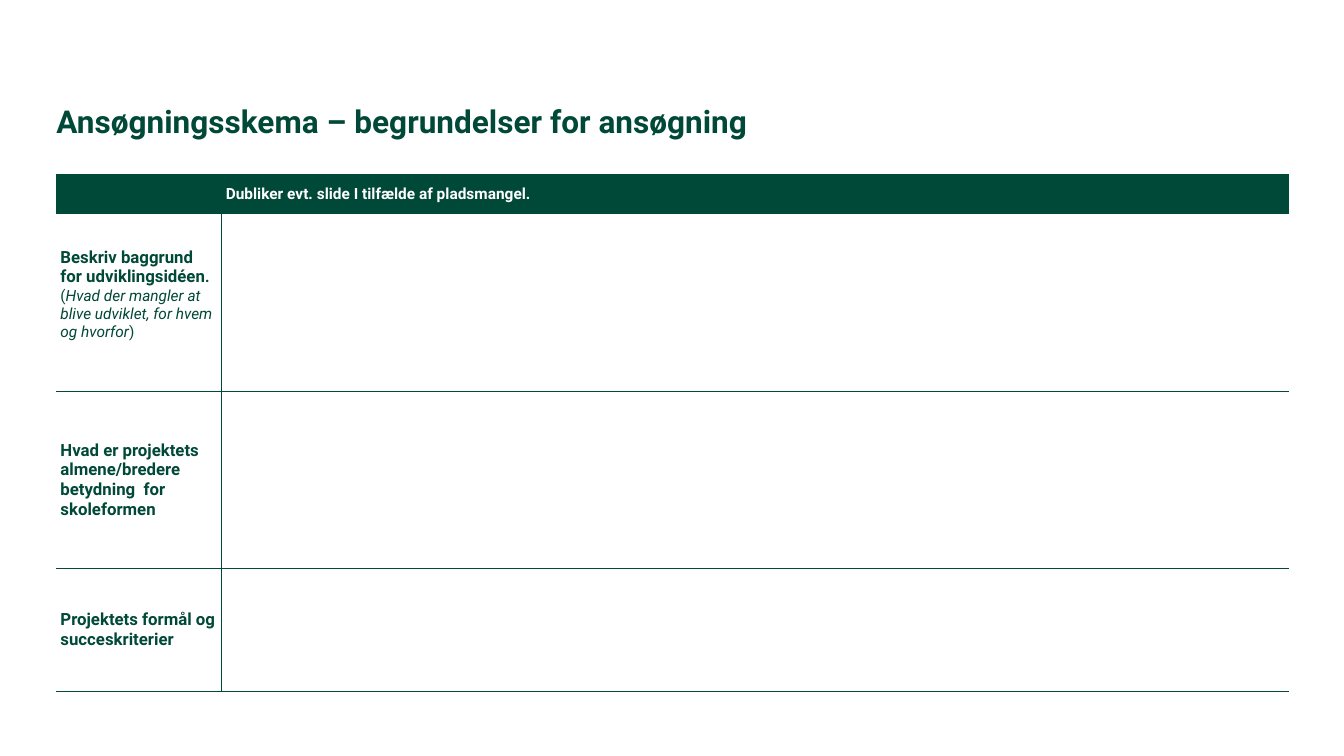
from pptx import Presentation, util as u
from pptx.dml.color import RGBColor
from pptx.enum import text
from pptx.oxml import parse_xml
from pptx.oxml.ns import nsdecls

GREEN = RGBColor(0x00, 0x48, 0x37)
WHITE = RGBColor(0xFF, 0xFF, 0xFF)
PLAIN_TABLE = "{2D5ABB26-0587-4C30-8999-92F81FD0307C}"
WIDTH, HEIGHT = 13.33, 7.5


class Deck:
    """Holds the style and the current slide; positions are shares of its size."""
    font = "Roboto"
    rule = 0.5

    def __init__(self):
        self.prs = Presentation()
        self.prs.slide_width, self.prs.slide_height = u.Inches(WIDTH), u.Inches(HEIGHT)
        self.s = self.prs.slides.add_slide(self.prs.slide_layouts[5])

    def x(self, share):
        return round(self.prs.slide_width * share)

    def y(self, share):
        return round(self.prs.slide_height * share)

    def style(self, font, size, color=GREEN, bold=True):
        font.name, font.size, font.bold = self.font, u.Pt(size), bold
        font.color.rgb = color

    def title(self, words, left, top, width, height):
        sp = self.s.shapes.title
        sp.left, sp.top = self.x(left), self.y(top)
        sp.width, sp.height = self.x(width), self.y(height)
        tf = sp.text_frame
        tf.margin_left = tf.margin_right = tf.margin_top = tf.margin_bottom = 0
        tf.vertical_anchor = text.MSO_ANCHOR.TOP
        tf.word_wrap = True
        tf.auto_size = text.MSO_AUTO_SIZE.NONE
        tf.text = words
        p = tf.paragraphs[0]
        p.alignment, p.line_spacing = text.PP_ALIGN.LEFT, 0.9
        self.style(p.font, 22.5)

    def table(self, left, top, cols, rows):
        frame = self.s.shapes.add_table(len(rows), len(cols), self.x(left), self.y(top),
                                        self.x(sum(cols)), self.y(sum(rows)))
        table = frame.table
        table.first_row = table.horz_banding = False
        table._tbl.tblPr[0].text = PLAIN_TABLE
        for col, share in zip(table.columns, cols):
            col.width = self.x(share)
        for row, share in zip(table.rows, rows):
            row.height = self.y(share)
        return table

    def cell(self, cell, sides, fill=None):
        cell.margin_left = cell.margin_right = u.Inches(0.04)
        cell.margin_top = cell.margin_bottom = u.Inches(0.04)
        cell.vertical_anchor = text.MSO_ANCHOR.MIDDLE
        for side in sides:
            cell._tc.get_or_add_tcPr().append(parse_xml(
                f'<a:ln{side} {nsdecls("a")} w="{u.Pt(self.rule)}"><a:solidFill>'
                f'<a:srgbClr val="{GREEN}"/></a:solidFill></a:ln{side}>'))
        if fill is None:
            cell.fill.background()
        else:
            cell.fill.solid()
            cell.fill.fore_color.rgb = fill

    def label(self, cell, words, size, color=GREEN):
        cell.text = words
        self.style(cell.text_frame.paragraphs[0].font, size, color)


def main():
    deck = Deck()
    left = 0.56 / WIDTH

    # Title
    deck.title("Ansøgningsskema – begrundelser for ansøgning",
               left, 0.14, 12.22 / WIDTH, 0.09)

    # Form: a header band, then one row per question
    cols = [w / WIDTH for w in (1.64, 10.58)]
    rows = [h / HEIGHT for h in (0.39, 1.76, 1.76, 1.22)]
    table = deck.table(left, 1.73 / HEIGHT, cols, rows)
    for i in range(len(rows)):
        for j, sides in enumerate(("RTB", "LTB")):
            deck.cell(table.cell(i, j), sides, GREEN if i == 0 else None)
    deck.label(table.cell(0, 1), "Dubliker evt. slide I tilfælde af pladsmangel.", 11, WHITE)

    # Questions
    questions = ["Beskriv baggrund for udviklingsidéen",
                 "Hvad er projektets almene/bredere betydning  for skoleformen",
                 "Projektets formål og succeskriterier"]
    for i, question in enumerate(questions, 1):
        deck.label(table.cell(i, 0), question, 12)

    # Hint under the first question
    background = table.cell(1, 0)
    background.margin_bottom = u.Inches(0.2)
    tf = background.text_frame
    r = tf.paragraphs[0].add_run()
    r.text, r.font.size = ".", u.Pt(11)
    p = tf.add_paragraph()
    deck.style(p.font, 11, bold=False)
    for words, italic in (("(", False),
                          ("Hvad der mangler at blive udviklet, for hvem og hvorfor", True),
                          (")", False)):
        r = p.add_run()
        r.text, r.font.italic = words, italic

    deck.prs.save("out.pptx")


if __name__ == "__main__":
    main()
